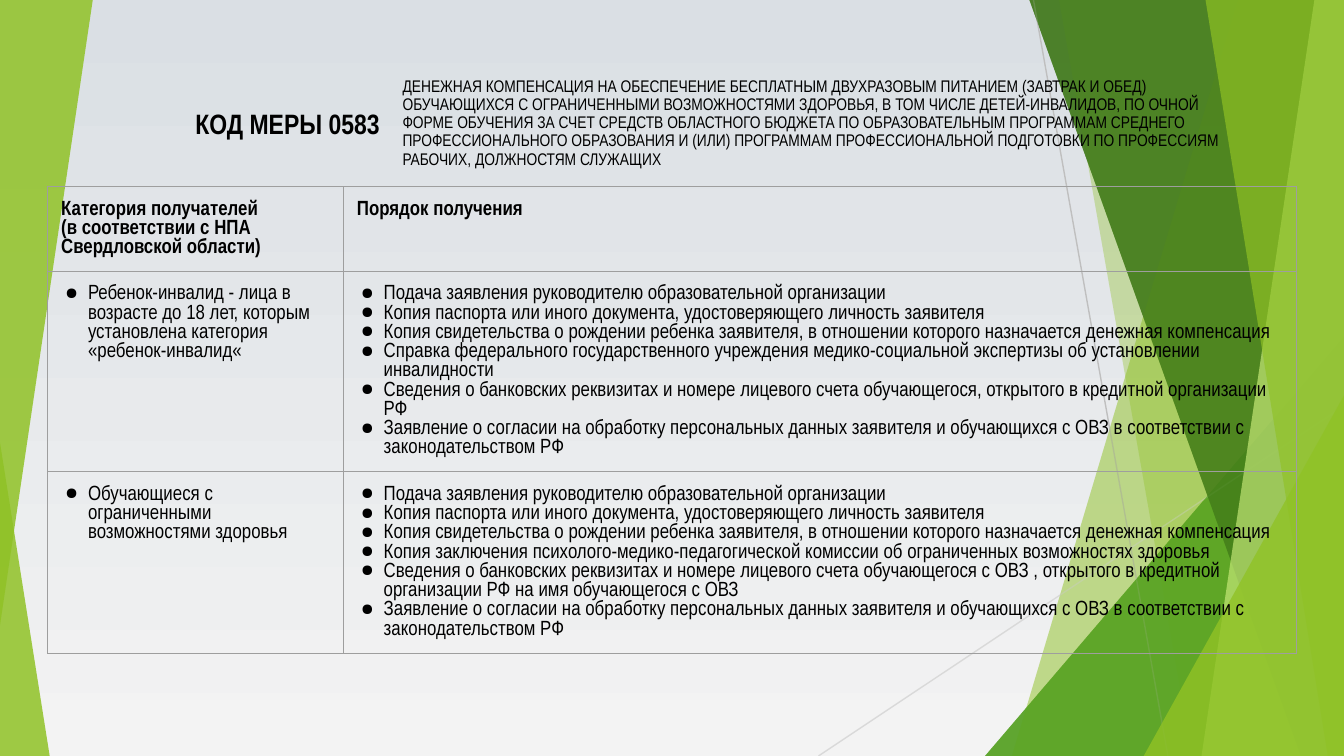
from dataclasses import dataclass

from lxml.etree import SubElement
from pptx import Presentation
from pptx.dml.color import RGBColor
from pptx.enum.shapes import MSO_CONNECTOR, MSO_SHAPE
from pptx.enum.text import MSO_ANCHOR, MSO_AUTO_SIZE, PP_ALIGN
from pptx.oxml.ns import qn
from pptx.util import Inches, Pt


@dataclass(frozen=True)
class Theme:
    font: str = "Arial Narrow"
    ink: str = "000000"
    grid: str = "9E9E9E"
    sky: str = "DADFE4"
    ground: str = "F3F3F3"
    green: str = "90C226"
    leaf: str = "54A021"
    forest: str = "3F7819"
    lime: str = "C0E474"
    ray_dark: str = "BFBFBF"
    ray_light: str = "D9D9D9"
    code_size: float = 15
    table_size: float = 11
    title_size: float = 9
    hairline: float = 0.75
    bullet_percent: int = 80
    title_spacing: float = 0.9


@dataclass(frozen=True)
class Strip:
    top_x: float
    bottom_x: float
    color: str
    opacity: int


@dataclass(frozen=True)
class Wedge:
    left: float
    top: float
    width: float
    height: float
    color: str
    opacity: int
    apex: float = 1
    turn: float = 0


@dataclass(frozen=True)
class Ray:
    start: tuple[float, float]
    end: tuple[float, float]
    color: str


@dataclass(frozen=True)
class Measure:
    recipients: str
    steps: tuple[str, ...]
    height: float


THEME = Theme()
WIDTH, HEIGHT = Inches(10), Inches(5.625)

FACETS = (
    Strip(92.1, 75.3, THEME.green, 30),
    Strip(78.8, 88.7, THEME.green, 20),
    Wedge(73.3, 44.5, 26.7, 55.5, THEME.leaf, 72),
    Strip(76.6, 96.8, THEME.forest, 70),
    Strip(97.8, 89.4, THEME.lime, 70),
    Strip(89.7, 98.8, THEME.green, 65),
    Wedge(85.1, 52.3, 14.9, 47.7, THEME.green, 80),
)
LOWER_LEFT = Wedge(0, 58.5, 3.7, 41.5, THEME.green, 85, apex=0)
UPPER_LEFT = Wedge(0, 0, 6.9, 82.7, THEME.green, 85, turn=180)
RAYS = (
    Ray((76.9, 0), (86.9, 100), THEME.ray_dark),
    Ray((100, 53.7), (60.9, 100), THEME.ray_light),
)

TITLE = (
    "ДЕНЕЖНАЯ КОМПЕНСАЦИЯ НА ОБЕСПЕЧЕНИЕ БЕСПЛАТНЫМ ДВУХРАЗОВЫМ ПИТАНИЕМ (ЗАВТРАК И ОБЕД) "
    "ОБУЧАЮЩИХСЯ С ОГРАНИЧЕННЫМИ ВОЗМОЖНОСТЯМИ ЗДОРОВЬЯ, В ТОМ ЧИСЛЕ ДЕТЕЙ-ИНВАЛИДОВ, ПО ОЧНОЙ "
    "ФОРМЕ ОБУЧЕНИЯ ЗА СЧЕТ СРЕДСТВ ОБЛАСТНОГО БЮДЖЕТА ПО ОБРАЗОВАТЕЛЬНЫМ ПРОГРАММАМ СРЕДНЕГО "
    "ПРОФЕССИОНАЛЬНОГО ОБРАЗОВАНИЯ И (ИЛИ) ПРОГРАММАМ ПРОФЕССИОНАЛЬНОЙ ПОДГОТОВКИ ПО ПРОФЕССИЯМ "
    "РАБОЧИХ, ДОЛЖНОСТЯМ СЛУЖАЩИХ"
)
HEADINGS = (
    "Категория получателей\v(в соответствии с НПА Свердловской области)",
    "Порядок получения",
)
HEADING_HEIGHT = 11.2
COLUMNS = (22, 70.9)
COMMON_STEPS = (
    "Подача заявления руководителю образовательной организации",
    "Копия паспорта или иного документа, удостоверяющего личность заявителя",
    "Копия свидетельства о рождении ребенка заявителя, в отношении которого назначается "
    "денежная компенсация",
)
CONSENT = (
    "Заявление о согласии на обработку персональных данных заявителя и обучающихся с ОВЗ "
    "в соответствии с законодательством РФ"
)
MEASURES = (
    Measure(
        "Ребенок-инвалид - лица в возрасте до 18 лет, которым установлена категория «ребенок-инвалид«",
        (
            *COMMON_STEPS,
            "Справка федерального государственного учреждения медико-социальной экспертизы "
            "об установлении инвалидности",
            "Сведения о банковских реквизитах и номере лицевого счета обучающегося, открытого "
            "в кредитной организации РФ",
            CONSENT,
        ),
        26.5,
    ),
    Measure(
        "Обучающиеся с ограниченными возможностями здоровья",
        (
            *COMMON_STEPS,
            "Копия заключения психолого-медико-педагогической комиссии об ограниченных "
            "возможностях здоровья",
            "Сведения о банковских реквизитах и номере лицевого счета обучающегося с ОВЗ , открытого "
            "в кредитной организации РФ на имя обучающегося с ОВЗ",
            CONSENT,
        ),
        24,
    ),
)


def across(percent: float) -> int:
    return round(WIDTH * percent / 100)


def down(percent: float) -> int:
    return round(HEIGHT * percent / 100)


def draw_facet(slide, facet: Strip | Wedge) -> None:
    if isinstance(facet, Strip):
        outline = slide.shapes.build_freeform(across(facet.top_x), 0, scale=1.0)
        outline.add_line_segments([(WIDTH, 0), (WIDTH, HEIGHT), (across(facet.bottom_x), HEIGHT)])
        pane = outline.convert_to_shape()
    else:
        pane = slide.shapes.add_shape(
            MSO_SHAPE.ISOSCELES_TRIANGLE,
            across(facet.left), down(facet.top), across(facet.width), down(facet.height),
        )
        pane.adjustments[0] = facet.apex
        pane.rotation = facet.turn
    pane.shadow.inherit = False
    pane.line.fill.background()
    pane.fill.solid()
    pane.fill.fore_color.rgb = RGBColor.from_string(facet.color)
    tint = pane.fill._xPr.find(qn("a:solidFill"))[0]
    SubElement(tint, qn("a:alpha"), val=str(facet.opacity * 1000))


def draw_ray(slide, ray: Ray) -> None:
    (x1, y1), (x2, y2) = ray.start, ray.end
    beam = slide.shapes.add_connector(MSO_CONNECTOR.STRAIGHT, across(x1), down(y1), across(x2), down(y2))
    beam.line.color.rgb = RGBColor.from_string(ray.color)
    beam.line.width = Pt(THEME.hairline)
    SubElement(beam._element.spPr, qn("a:effectLst"))


def format_runs(paragraph, size: float, bold: bool = False) -> None:
    for run in paragraph.runs:
        run.font.name = THEME.font
        run.font.size = Pt(size)
        run.font.bold = bold
        run.font.color.rgb = RGBColor.from_string(THEME.ink)


def add_bullet(paragraph) -> None:
    properties = paragraph._p.get_or_add_pPr()
    properties.set("marL", str(Inches(0.2)))
    properties.set("indent", str(Inches(-0.17)))
    SubElement(SubElement(properties, qn("a:buClr")), qn("a:srgbClr"), val=THEME.ink)
    SubElement(properties, qn("a:buSzPct"), val=str(THEME.bullet_percent * 1000))
    SubElement(properties, qn("a:buChar"), char="●")


def fill_cell(cell, lines: tuple[str, ...], heading: bool = False) -> None:
    cell.margin_left = cell.margin_right = cell.margin_top = cell.margin_bottom = Inches(0.1)
    for side in ("a:lnL", "a:lnR", "a:lnT", "a:lnB"):
        border = SubElement(cell._tc.get_or_add_tcPr(), qn(side), w=str(Pt(THEME.hairline)))
        SubElement(SubElement(border, qn("a:solidFill")), qn("a:srgbClr"), val=THEME.grid)
    cell.fill.background()
    cell.text_frame.text = "\n".join(lines)
    for paragraph in cell.text_frame.paragraphs:
        format_runs(paragraph, THEME.table_size, heading)
        if not heading:
            add_bullet(paragraph)


def draw_table(slide) -> None:
    heights = (HEADING_HEIGHT, *(measure.height for measure in MEASURES))
    table = slide.shapes.add_table(
        len(heights), len(COLUMNS), across(3.55), down(24.7), across(sum(COLUMNS)), down(sum(heights))
    ).table
    table.first_row = table.horz_banding = False
    for column, share in zip(table.columns, COLUMNS):
        column.width = across(share)
    for row, share in zip(table.rows, heights):
        row.height = down(share)
    for index, heading in enumerate(HEADINGS):
        fill_cell(table.cell(0, index), (heading,), heading=True)
    for index, measure in enumerate(MEASURES, start=1):
        fill_cell(table.cell(index, 0), (measure.recipients,))
        fill_cell(table.cell(index, 1), measure.steps)


def place_text(box, left: float, width: float, text: str, insets: tuple[float, float], align: PP_ALIGN):
    box.left, box.top, box.width, box.height = across(left), down(9.45), across(width), down(13.7)
    frame = box.text_frame
    frame.word_wrap = True
    frame.auto_size = MSO_AUTO_SIZE.NONE
    frame.vertical_anchor = MSO_ANCHOR.MIDDLE
    frame.margin_left = frame.margin_right = Inches(insets[0])
    frame.margin_top = frame.margin_bottom = Inches(insets[1])
    frame.text = text
    frame.paragraphs[0].alignment = align
    return frame.paragraphs[0]


def main() -> None:
    deck = Presentation()
    deck.slide_width, deck.slide_height = WIDTH, HEIGHT
    slide = deck.slides.add_slide(deck.slide_layouts[5])
    backdrop = slide.background.fill
    backdrop.gradient()
    backdrop.gradient_angle = 270
    for stop, color in zip(backdrop.gradient_stops, (THEME.sky, THEME.ground)):
        stop.color.rgb = RGBColor.from_string(color)

    for facet in (*FACETS, LOWER_LEFT):
        draw_facet(slide, facet)
    for ray in RAYS:
        draw_ray(slide, ray)
    for facet in (*FACETS, UPPER_LEFT):
        draw_facet(slide, facet)

    draw_table(slide)
    title = slide.shapes.title
    slide.shapes._spTree.append(title._element)
    heading = place_text(title, 29.25, 63, TITLE, (0.07, 0.04), PP_ALIGN.LEFT)
    heading.line_spacing = THEME.title_spacing
    format_runs(heading, THEME.title_size)
    code_box = slide.shapes.add_textbox(0, 0, 0, 0)
    code = place_text(code_box, 8.15, 21.1, "КОД МЕРЫ 0583", (0.1, 0.1), PP_ALIGN.RIGHT)
    format_runs(code, THEME.code_size, bold=True)
    deck.save("out.pptx")


if __name__ == "__main__":
    main()
